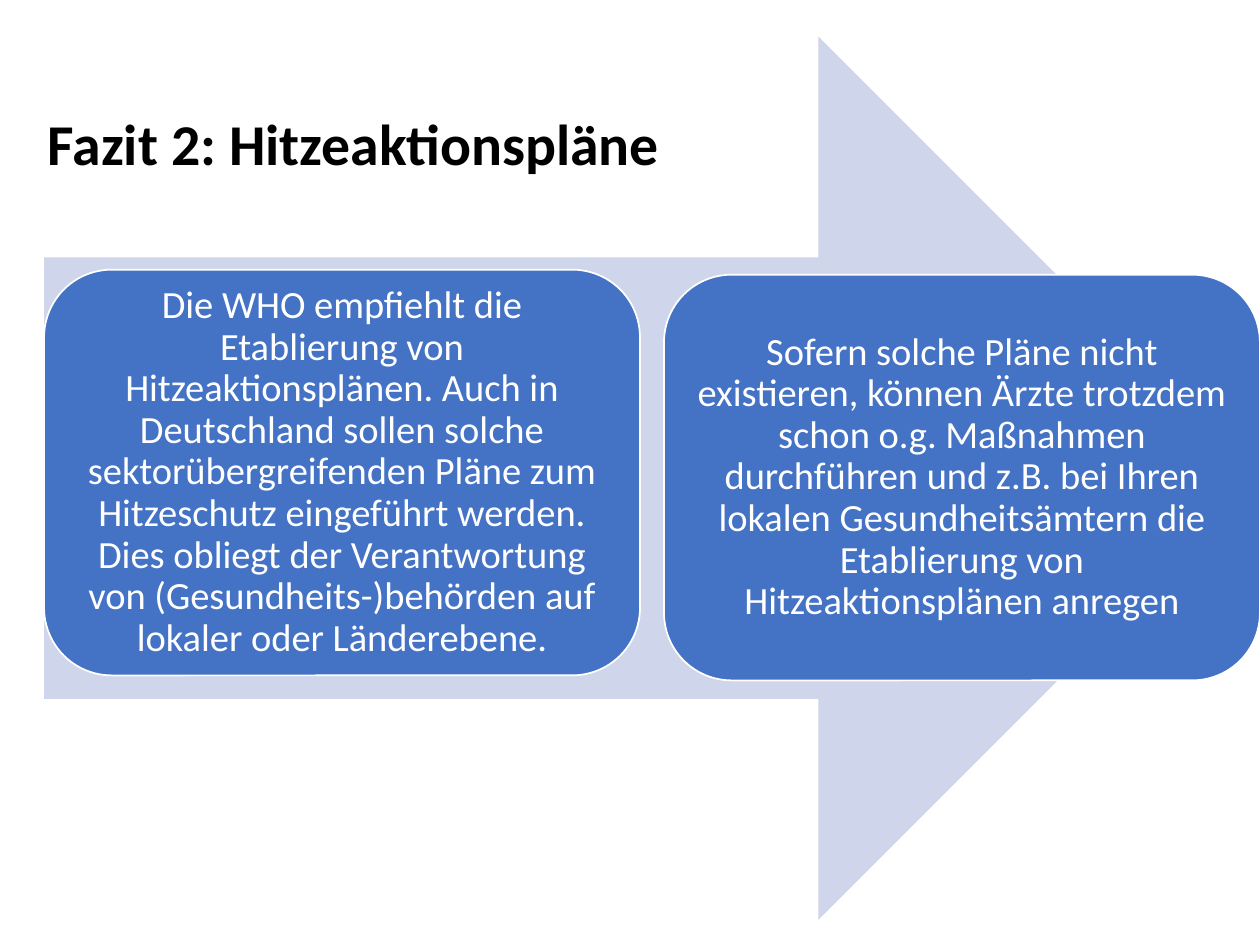
from dataclasses import dataclass

from pptx import Presentation
from pptx.dml.color import RGBColor
from pptx.enum.shapes import MSO_SHAPE
from pptx.enum.text import MSO_ANCHOR, PP_ALIGN
from pptx.util import Inches, Pt

RIGHT_ARROW = MSO_SHAPE.RIGHT_ARROW
ROUNDED = MSO_SHAPE.ROUNDED_RECTANGLE
MIDDLE = MSO_ANCHOR.MIDDLE
LEFT, CENTER = PP_ALIGN.LEFT, PP_ALIGN.CENTER
FONT = "Calibri"
COLORS = {"arrow": "CFD5EA", "card": "4472C4", "white": "FFFFFF", "black": "000000"}
CARD_WIDTH, CARD_HEIGHT, CARD_INSET = 4.73, 3.22, 0.09


@dataclass(frozen=True)
class Card:
    left: float
    top: float
    text: str


CARDS = [
    Card(
        0.35,
        2.14,
        "Die WHO empfiehlt die Etablierung von Hitzeaktionsplänen. Auch in Deutschland "
        "sollen solche sektorübergreifenden Pläne zum Hitzeschutz eingeführt werden. "
        "Dies obliegt der Verantwortung von (Gesundheits-)behörden auf lokaler oder "
        "Länderebene.",
    ),
    Card(
        5.27,
        2.18,
        "Sofern solche Pläne nicht existieren, können Ärzte trotzdem schon o.g. Maßnahmen "
        "durchführen und z.B. bei Ihren lokalen Gesundheitsämtern die Etablierung von "
        "Hitzeaktionsplänen anregen",
    ),
]


def color(name: str) -> RGBColor:
    return RGBColor.from_string(COLORS[name])


def add_filled_shape(slide, kind, left: float, top: float, width: float, height: float, fill: str):
    shape = slide.shapes.add_shape(kind, Inches(left), Inches(top), Inches(width), Inches(height))
    shape.shadow.inherit = False
    shape.fill.solid()
    shape.fill.fore_color.rgb = color(fill)
    shape.line.fill.background()
    return shape


def write_text(box, text: str, size: float, ink: str, align, bold: bool = False) -> None:
    frame = box.text_frame
    frame.word_wrap = True
    frame.vertical_anchor = MIDDLE
    para = frame.paragraphs[0]
    para.alignment = align
    para.line_spacing = 0.9
    span = para.add_run()
    span.text = text
    span.font.name = FONT
    span.font.size = Pt(size)
    span.font.bold = bold
    span.font.color.rgb = color(ink)


def add_card(slide, card: Card) -> None:
    box = add_filled_shape(slide, ROUNDED, card.left, card.top, CARD_WIDTH, CARD_HEIGHT, "card")
    box.line.color.rgb = color("white")
    box.line.width = Pt(1)
    frame = box.text_frame
    frame.margin_left = frame.margin_right = Inches(CARD_INSET)
    frame.margin_top = frame.margin_bottom = Inches(CARD_INSET)
    write_text(box, card.text, 22, "white", CENTER)


def main() -> None:
    """Build the slide on heat action plans."""
    deck = Presentation()
    deck.slide_width, deck.slide_height = Inches(10), Inches(7.5)
    page = deck.slides.add_slide(deck.slide_layouts[6])
    add_filled_shape(page, RIGHT_ARROW, 0.35, 0.29, 9.65, 7.01, "arrow")
    for card in CARDS:
        add_card(page, card)
    title = page.shapes.add_textbox(Inches(0.28), Inches(0.44), Inches(8.62), Inches(1.45))
    write_text(title, "Fazit 2: Hitzeaktionspläne", 33, "black", LEFT, bold=True)
    deck.save("out.pptx")


if __name__ == "__main__":
    main()
